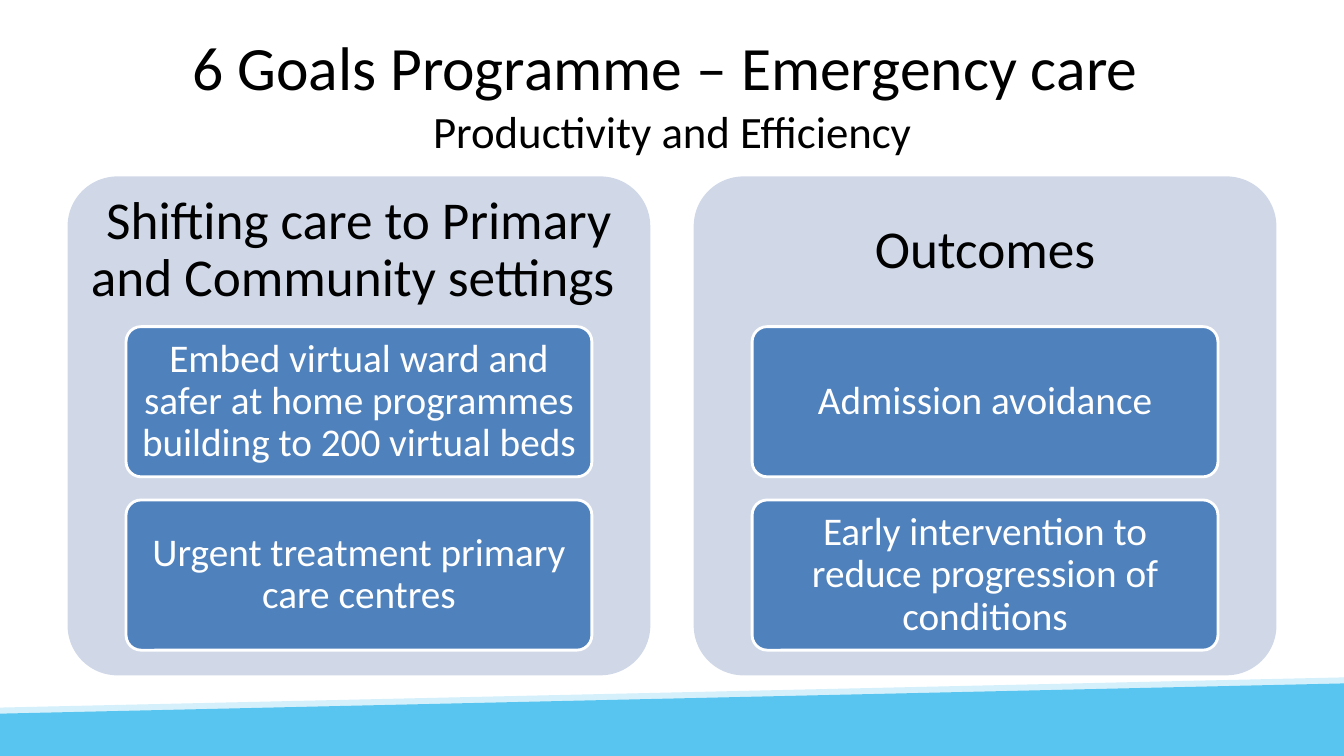
from dataclasses import dataclass

from pptx import Presentation
from pptx.dml.color import RGBColor
from pptx.enum import shapes, text
from pptx.util import Inches, Pt

COLORS = {
    "black": "000000",
    "white": "FFFFFF",
    "panel": "D0D8E8",
    "card": "4F81BD",
    "pale_band": "D5F0FB",
    "band": "58C4F0",
}
FONT = "Calibri"
SLIDE_W, SLIDE_H = 13.33, 7.5
PANEL_TOP, PANEL_W, PANEL_H = 1.75, 5.78, 4.95
PANEL_LEFT, PANEL_PITCH = 0.67, 6.21
HEADING_H = 1.48
CARD_TOP, CARD_W, CARD_H, CARD_PITCH = 3.24, 4.62, 1.49, 1.72
CARD_INDENT = (PANEL_W - CARD_W) / 2


@dataclass
class Panel:
    heading: str
    cards: list[str]


@dataclass
class Band:
    left_y: float
    right_y: float
    color: str


PANELS = [
    Panel("Shifting care to Primary and Community settings ", [
        "Embed virtual ward and safer at home programmes building to 200 virtual beds",
        "Urgent treatment primary care centres",
    ]),
    Panel("Outcomes", [
        "Admission avoidance",
        "Early intervention to reduce progression of conditions",
    ]),
]
BANDS = [Band(7.02, 6.72, "pale_band"), Band(7.08, 6.78, "band")]


def rgb(name: str) -> RGBColor:
    return RGBColor.from_string(COLORS[name])


def write(sp, content: str, sizes: list[float], color: str,
          inset_x: float, inset_y: float, spacing: float):
    """Centre the content in the shape, with one size per line."""
    tf = sp.text_frame
    tf.text = content
    tf.word_wrap = True
    tf.vertical_anchor = text.MSO_ANCHOR.MIDDLE
    tf.margin_left = tf.margin_right = Inches(inset_x)
    tf.margin_top = tf.margin_bottom = Inches(inset_y)
    p = tf.paragraphs[0]
    p.alignment = text.PP_ALIGN.CENTER
    p.line_spacing = spacing
    for r, size in zip(p.runs, sizes):
        r.font.name = FONT
        r.font.size = Pt(size)
        r.font.color.rgb = rgb(color)


def add_rounded(slide, x: float, y: float, w: float, h: float, color: str):
    sp = slide.shapes.add_shape(shapes.MSO_SHAPE.ROUNDED_RECTANGLE,
                                Inches(x), Inches(y), Inches(w), Inches(h))
    sp.adjustments[0] = 0.1
    sp.shadow.inherit = False
    sp.fill.solid()
    sp.fill.fore_color.rgb = rgb(color)
    sp.line.fill.background()
    return sp


def add_band(slide, band: Band):
    points = [(SLIDE_W, band.right_y), (SLIDE_W, SLIDE_H), (0, SLIDE_H)]
    builder = slide.shapes.build_freeform(0, Inches(band.left_y))
    builder.add_line_segments([(Inches(x), Inches(y)) for x, y in points])
    sp = builder.convert_to_shape()
    sp.shadow.inherit = False
    sp.fill.solid()
    sp.fill.fore_color.rgb = rgb(band.color)
    sp.line.fill.background()


def add_panel(slide, panel: Panel, x: float):
    add_rounded(slide, x, PANEL_TOP, PANEL_W, PANEL_H, "panel")
    heading = slide.shapes.add_textbox(Inches(x), Inches(PANEL_TOP),
                                       Inches(PANEL_W), Inches(HEADING_H))
    write(heading, panel.heading, [38], "black", 0.16, 0.16, 0.9)
    for i, label in enumerate(panel.cards):
        card = add_rounded(slide, x + CARD_INDENT, CARD_TOP + i * CARD_PITCH,
                           CARD_W, CARD_H, "card")
        card.line.color.rgb = rgb("white")
        card.line.width = Pt(2)
        write(card, label, [28], "white", 0.08, 0.06, 0.9)


def main():
    prs = Presentation()
    prs.slide_width, prs.slide_height = Inches(SLIDE_W), Inches(SLIDE_H)
    slide = prs.slides.add_slide(prs.slide_layouts[6])

    # Sloping bands at the foot
    for band in BANDS:
        add_band(slide, band)

    # Title and subtitle
    title = slide.shapes.add_textbox(Inches(0.67), Inches(0.3), Inches(12), Inches(1.25))
    write(title, "6 Goals Programme – Emergency care \vProductivity and Efficiency",
          [44, 32], "black", 0.1, 0.05, 1.0)

    # Panels with their cards
    for i, panel in enumerate(PANELS):
        add_panel(slide, panel, PANEL_LEFT + i * PANEL_PITCH)

    prs.save("out.pptx")


if __name__ == "__main__":
    main()
